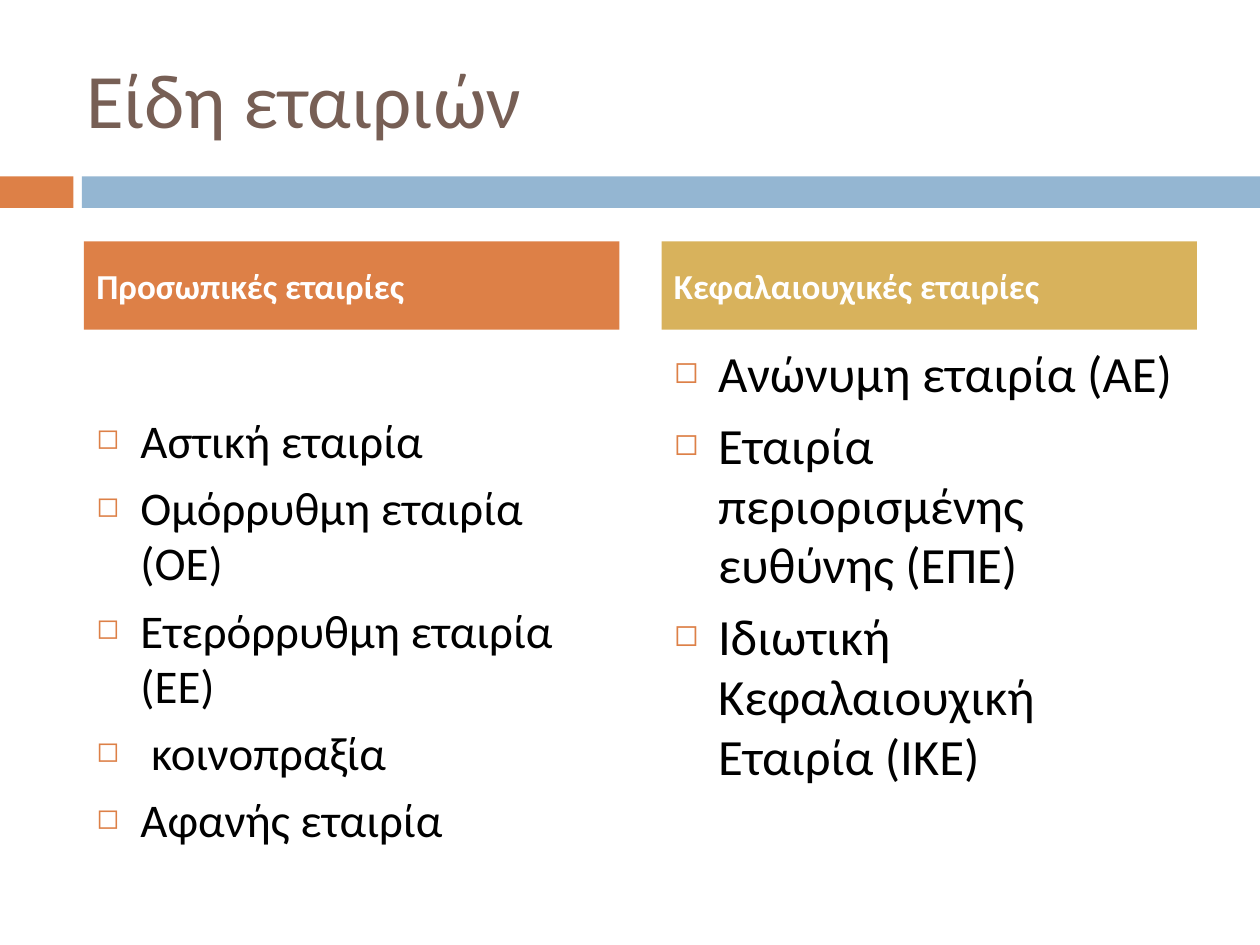
from dataclasses import dataclass

from lxml import etree
from pptx import Presentation, util as u
from pptx.dml.color import RGBColor
from pptx.enum import shapes, text
from pptx.oxml import ns


@dataclass(frozen=True)
class Theme:
    font: str = "Calibri"
    title: str = "775F55"
    body: str = "000000"
    white: str = "FFFFFF"
    orange: str = "DD8047"
    blue: str = "94B6D2"
    gold: str = "D8B25C"
    title_size: float = 44
    heading_size: float = 20
    paragraph_gap: float = 7
    line_spacing: float = 0.985
    bullet_indent: float = 0.35


class SlideBuilder:
    """Draws themed elements on a slide divided into 120 columns and 90 rows."""

    columns, rows = 120, 90

    def __init__(self, presentation, theme):
        self.theme = theme
        self.width = presentation.slide_width
        self.height = presentation.slide_height
        self.slide = presentation.slides.add_slide(presentation.slide_layouts[5])

    def box(self, left, top, width, height):
        column, row = self.width / self.columns, self.height / self.rows
        return [round(value) for value in
                (left * column, top * row, width * column, height * row)]

    def style(self, paragraph, size, color, bold=False):
        paragraph.alignment = text.PP_ALIGN.LEFT
        font = paragraph.font
        font.name, font.size, font.bold = self.theme.font, u.Pt(size), bold
        font.color.rgb = RGBColor.from_string(color)

    def title(self, wording, *area):
        shape = self.slide.shapes.title
        shape.left, shape.top, shape.width, shape.height = self.box(*area)
        frame = shape.text_frame
        frame.text = wording
        frame.vertical_anchor = text.MSO_ANCHOR.MIDDLE
        self.style(frame.paragraphs[0], self.theme.title_size, self.theme.title)

    def bar(self, color, *area):
        shape = self.slide.shapes.add_shape(
            shapes.MSO_SHAPE.RECTANGLE, *self.box(*area))
        shape.shadow.inherit = False
        shape.fill.solid()
        shape.fill.fore_color.rgb = RGBColor.from_string(color)
        shape.line.fill.background()
        return shape

    def heading(self, wording, color, *area):
        frame = self.bar(color, *area).text_frame
        frame.text = wording
        frame.word_wrap = True
        frame.vertical_anchor = text.MSO_ANCHOR.MIDDLE
        self.style(frame.paragraphs[0], self.theme.heading_size,
                   self.theme.white, bold=True)

    def bullet(self, paragraph):
        properties = paragraph._p.get_or_add_pPr()
        indent = u.Inches(self.theme.bullet_indent)
        properties.set("marL", str(indent))
        properties.set("indent", str(-indent))
        color = etree.SubElement(properties, ns.qn("a:buClr"))
        etree.SubElement(color, ns.qn("a:srgbClr"), val=self.theme.orange)
        etree.SubElement(properties, ns.qn("a:buSzPct"), val="60000")
        etree.SubElement(properties, ns.qn("a:buChar"), char="◻")

    def bullets(self, items, size, top_margin, *area):
        frame = self.slide.shapes.add_textbox(*self.box(*area)).text_frame
        frame.word_wrap = True
        frame.margin_top = u.Inches(top_margin)
        frame.text = "\n".join(items)
        for index, paragraph in enumerate(frame.paragraphs):
            self.bullet(paragraph)
            paragraph.line_spacing = self.theme.line_spacing
            paragraph.space_before = u.Pt(self.theme.paragraph_gap if index else 0)
            self.style(paragraph, size, self.theme.body)


def main():
    presentation = Presentation()
    presentation.slide_width, presentation.slide_height = u.Inches(10), u.Inches(7.5)
    theme = Theme()
    builder = SlideBuilder(presentation, theme)
    builder.bar(theme.orange, 0, 16.8, 7, 3)
    builder.bar(theme.blue, 7.8, 16.8, 112.2, 3)
    builder.title("Είδη εταιριών", 7, 3.6, 107, 11.4)

    partnerships = ["Αστική εταιρία", "Ομόρρυθμη εταιρία (ΟΕ)",
                    "Ετερόρρυθμη εταιρία (ΕΕ)", " κοινοπραξία",
                    "Αφανής εταιρία"]
    corporations = ["Ανώνυμη εταιρία (ΑΕ)",
                    "Εταιρία περιορισμένης ευθύνης (ΕΠΕ)",
                    "Ιδιωτική Κεφαλαιουχική Εταιρία (ΙΚΕ)"]
    groups = [
        (8, "Προσωπικές εταιρίες", theme.orange, partnerships, 26.8, 0.62),
        (63, "Κεφαλαιουχικές εταιρίες", theme.gold, corporations, 29, 0.07),
    ]
    for left, heading, color, items, size, top_margin in groups:
        builder.bullets(items, size, top_margin, left, 32, 51, 47)
        builder.heading(heading, color, left, 23, 51, 8.4)
    presentation.save("out.pptx")


if __name__ == "__main__":
    main()
